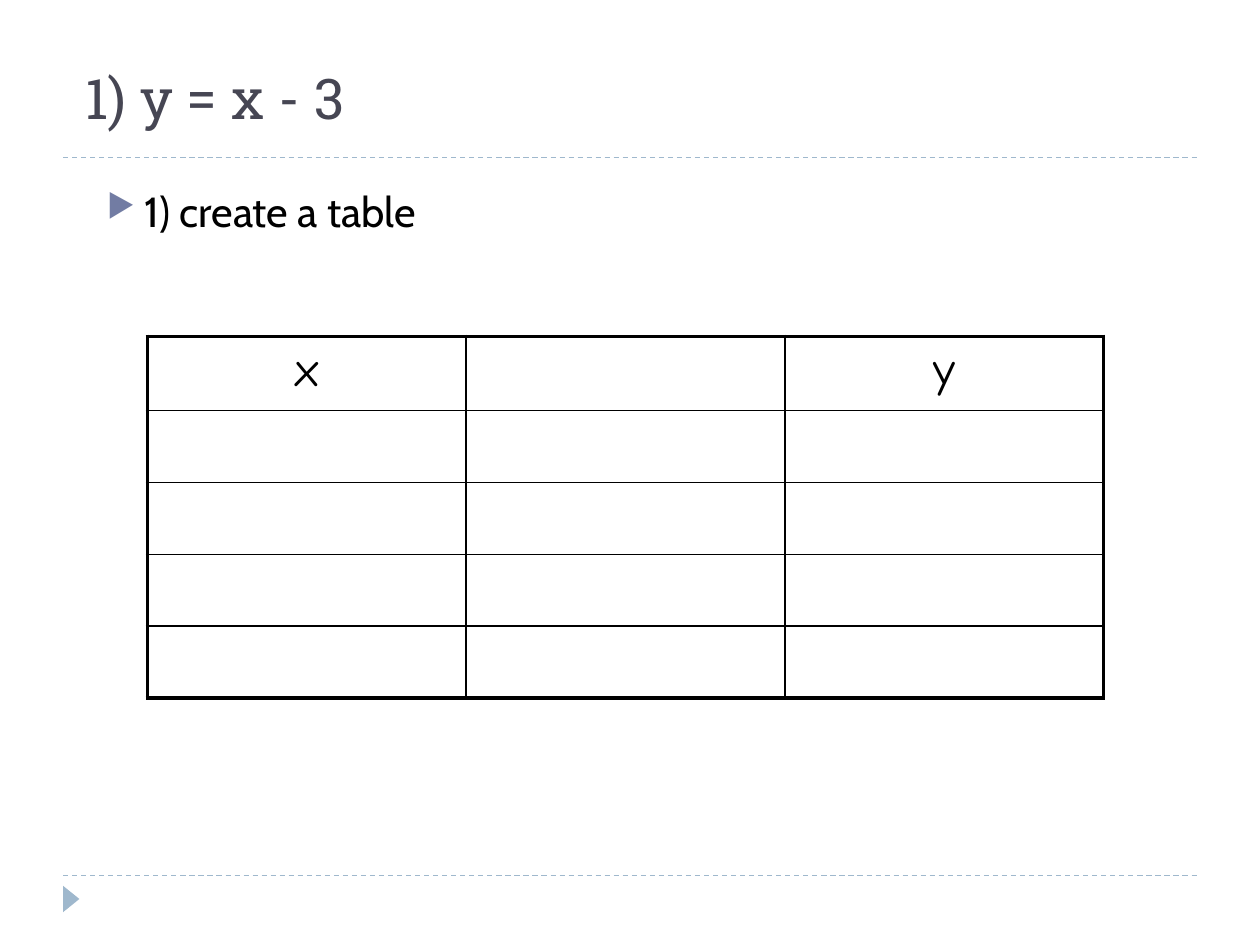
from lxml.etree import SubElement
from pptx import Presentation
from pptx.dml.color import RGBColor
from pptx.enum.dml import MSO_LINE_DASH_STYLE as Dash
from pptx.enum.shapes import MSO_CONNECTOR as Connector, MSO_SHAPE as Shape
from pptx.enum.text import MSO_ANCHOR as Anchor, PP_ALIGN as Align
from pptx.oxml.ns import qn
from pptx.util import Inches, Pt

WIDTH, HEIGHT = 10, 7.5
MARGIN = 0.5
ACCENT, BULLET, TITLE, BLACK = "9FB8CD", "727CA3", "464653", "000000"
ROWS, COLUMNS = 5, 3
COLUMN_WIDTH, HEADER_HEIGHT, ROW_HEIGHT = 2.53, 0.59, 0.57
THICK, THIN = 2.25, 1
HEADERS = ["x", "", "y"]


def color(value):
    """Turn a hex string into a colour."""
    return RGBColor.from_string(value)


def write(frame, text, font, size, ink=BLACK, align=Align.LEFT, before=0):
    """Write one formatted paragraph into a text frame and return it."""
    para = frame.paragraphs[0]
    para.alignment = align
    para.space_before = Pt(before)
    span = para.add_run()
    span.text = text
    span.font.name = font
    span.font.size = Pt(size)
    span.font.color.rgb = color(ink)
    return para


def add_bullet(para, char, ink, percent, indent):
    """Give a paragraph a coloured bullet and a hanging indent."""
    props = para._p.get_or_add_pPr()
    props.set("marL", str(Inches(indent)))
    props.set("indent", str(-Inches(indent)))
    tint = SubElement(props, qn("a:buClr"))
    SubElement(tint, qn("a:srgbClr"), val=ink)
    SubElement(props, qn("a:buSzPct"), val=str(percent * 1000))
    SubElement(props, qn("a:buChar"), char=char)


def add_rule(page, top):
    """Draw a dashed rule between the side margins."""
    rule = page.shapes.add_connector(
        Connector.STRAIGHT, Inches(MARGIN), Inches(top),
        Inches(WIDTH - MARGIN), Inches(top))
    rule.line.color.rgb = color(ACCENT)
    rule.line.width = Pt(0.75)
    rule.line.dash_style = Dash.DASH
    SubElement(rule._element.spPr, qn("a:effectLst"))


def add_marker(page):
    """Draw the small triangle pointing right in the footer."""
    marker = page.shapes.add_shape(
        Shape.ISOSCELES_TRIANGLE, Inches(0.46), Inches(7.07), Inches(0.21), Inches(0.13))
    marker.rotation = 90
    marker.shadow.inherit = False
    marker.fill.solid()
    marker.fill.fore_color.rgb = color(ACCENT)
    marker.line.fill.background()


def set_title(page, text):
    """Place and format the title placeholder."""
    title = page.shapes.title
    title.left, title.top = Inches(0.58), Inches(0.42)
    title.width, title.height = Inches(7.51), Inches(0.67)
    title.text_frame.vertical_anchor = Anchor.BOTTOM
    write(title.text_frame, text, "Roboto Slab", 32, ink=TITLE)


def add_body(page, text):
    """Add the bulleted instruction."""
    box = page.shapes.add_textbox(Inches(0.75), Inches(1.42), Inches(8.42), Inches(5.5))
    box.text_frame.word_wrap = True
    para = write(box.text_frame, text, "Cabin", 24, before=6)
    add_bullet(para, "▶", BULLET, 76, 0.3)


def set_borders(cell, row, column):
    """Draw thick lines on the table's outline and thin ones inside."""
    edges = {"L": column == 0, "R": column == COLUMNS - 1,
             "T": row == 0, "B": row == ROWS - 1}
    props = cell._tc.get_or_add_tcPr()
    for side, outer in edges.items():
        width = Pt(THICK if outer else THIN)
        line = SubElement(props, qn(f"a:ln{side}"), w=str(width))
        fill = SubElement(line, qn("a:solidFill"))
        SubElement(fill, qn("a:srgbClr"), val=BLACK)


def add_value_table(page):
    """Add the table of values with its headers and empty rows."""
    heights = [HEADER_HEIGHT] + [ROW_HEIGHT] * (ROWS - 1)
    table = page.shapes.add_table(
        ROWS, COLUMNS, Inches(1.17), Inches(2.67),
        Inches(COLUMN_WIDTH * COLUMNS), Inches(sum(heights))).table
    table.first_row = table.horz_banding = False
    for column in table.columns:
        column.width = Inches(COLUMN_WIDTH)
    for row, height in zip(table.rows, heights):
        row.height = Inches(height)
    for index, cell in enumerate(table.iter_cells()):
        set_borders(cell, *divmod(index, COLUMNS))
        cell.fill.background()
    for column, text in enumerate(HEADERS):
        if text:
            write(table.cell(0, column).text_frame, text, "Comic Neue", 28,
                  align=Align.CENTER, before=5.6)


def main():
    """Build the slide and save the deck."""
    deck = Presentation()
    deck.slide_width, deck.slide_height = Inches(WIDTH), Inches(HEIGHT)
    page = deck.slides.add_slide(deck.slide_layouts[5])
    for top in (6.95, 1.25):
        add_rule(page, top)
    add_marker(page)
    set_title(page, "1) y = x - 3")
    add_body(page, "1) create a table")
    add_value_table(page)
    deck.save("out.pptx")


if __name__ == "__main__":
    main()
